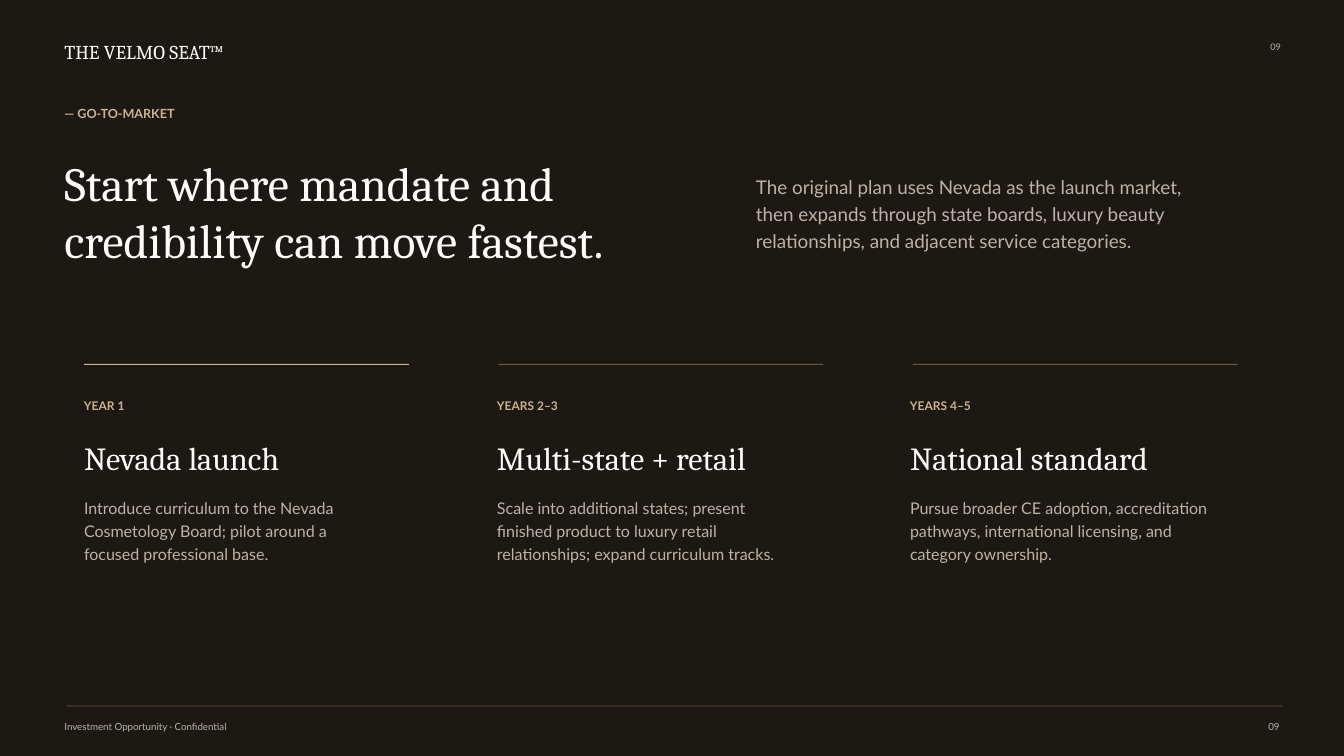
from pptx import Presentation
from pptx.dml.color import RGBColor as RGB
from pptx.enum.shapes import MSO_SHAPE as Kind
from pptx.enum.text import PP_ALIGN as Align
from pptx.util import Inches, Pt

# The slide is a grid of 48 columns by 27 rows of square cells
WIDE, HIGH = 20, 11.25
COLS, ROWS = 48, 27
CELL = WIDE / COLS

HUE = {
    "ground": "1C1814",
    "light": "FFFDF9",
    "muted": "BEB2A5",
    "gold": "CDB48A",
    "bronze": "6F5A3E",
}
SERIF, SANS = "Cambria", "Lato"
PAGE = "09"
HAIR = 0.03  # rule thickness in rows

STAGES = [
    ("YEAR 1", "Nevada launch",
     "Introduce curriculum to the Nevada Cosmetology Board; "
     "pilot around a focused professional base."),
    ("YEARS 2–3", "Multi-state + retail",
     "Scale into additional states; present finished product to "
     "luxury retail relationships; expand curriculum tracks."),
    ("YEARS 4–5", "National standard",
     "Pursue broader CE adoption, accreditation pathways, "
     "international licensing, and category ownership."),
]


def place(*cells):
    return [Inches(n * CELL) for n in cells]


def block(slide, x, y, w, h, hue):
    shape = slide.shapes.add_shape(Kind.RECTANGLE, *place(x, y, w, h))
    shape.shadow.inherit = False
    shape.fill.solid()
    shape.fill.fore_color.rgb = RGB.from_string(HUE[hue])
    shape.line.fill.background()


def write(slide, x, y, w, h, text, size, hue, face=SANS, bold=False,
          lead=1.08, align=Align.LEFT):
    frame = slide.shapes.add_textbox(*place(x, y, w, h)).text_frame
    frame.word_wrap = True
    frame.margin_left = frame.margin_right = 0
    frame.margin_top = frame.margin_bottom = 0
    para = frame.paragraphs[0]
    para.alignment = align
    para.line_spacing = lead
    run = para.add_run()
    run.text = text
    font = run.font
    font.name, font.size, font.bold = face, Pt(size), bold
    font.color.rgb = RGB.from_string(HUE[hue])


def header(slide, x, y, w):
    # Name, page number and section label
    write(slide, x, y, 11.5, 1.2, "THE VELMO SEAT™", 21, "light", SERIF)
    write(slide, x + w - 3.5, y + 0.09, 3.5, 0.65, PAGE, 9.8, "muted",
          align=Align.RIGHT)
    write(slide, x, y + 2.4, 17.5, 0.9, "— GO-TO-MARKET", 13.5, "gold",
          bold=True)


def intro(slide, x, y, w):
    # Headline on the left, summary on the right
    write(slide, x, y, 22.5, 3.7,
          "Start where mandate and credibility can move fastest.",
          51, "light", SERIF, lead=1)
    write(slide, x + w - 16.25, y + 0.6, 16.25, 2.8,
          "The original plan uses Nevada as the launch market, then expands "
          "through state boards, luxury beauty relationships, and adjacent "
          "service categories.", 20.2, "muted", lead=1.2)


def stages(slide, x, y, w):
    # Rules fill the width with equal gaps; text has its own pitch
    rule = 11.6
    step = (w - rule) / (len(STAGES) - 1)
    for i, (when, title, body) in enumerate(STAGES):
        block(slide, x + i * step, y, rule, HAIR,
              "bronze" if i else "gold")
        left = x + i * 14.75
        write(slide, left, y + 1.2, 7.5, 0.75, when, 12.8, "gold", bold=True)
        write(slide, left, y + 2.55, 10.5, 1.45, title, 34.5, "light", SERIF)
        write(slide, left, y + 4.65, 10.75, 3.2, body, 17.2, "muted",
              lead=1.2)


def footer(slide, x, y, w):
    # Rule, note and page number
    block(slide, x + 0.1, y, w, HAIR, "bronze")
    write(slide, x, y + 0.5, 14, 0.6,
          "Investment Opportunity · Confidential", 10.5, "muted")
    write(slide, x + w - 2.7, y + 0.5, 2.7, 0.6, PAGE, 10.5, "muted",
          align=Align.RIGHT)


def main():
    deck = Presentation()
    deck.slide_width, deck.slide_height = Inches(WIDE), Inches(HIGH)
    slide = deck.slides.add_slide(deck.slide_layouts[6])
    block(slide, 0, 0, COLS, ROWS, "ground")
    header(slide, 2.3, 1.35, 43.45)
    intro(slide, 2.3, 5.5, 40.95)
    stages(slide, 3, 13, 41.2)
    footer(slide, 2.3, 25.2, 43.4)
    deck.save("out.pptx")


if __name__ == "__main__":
    main()
